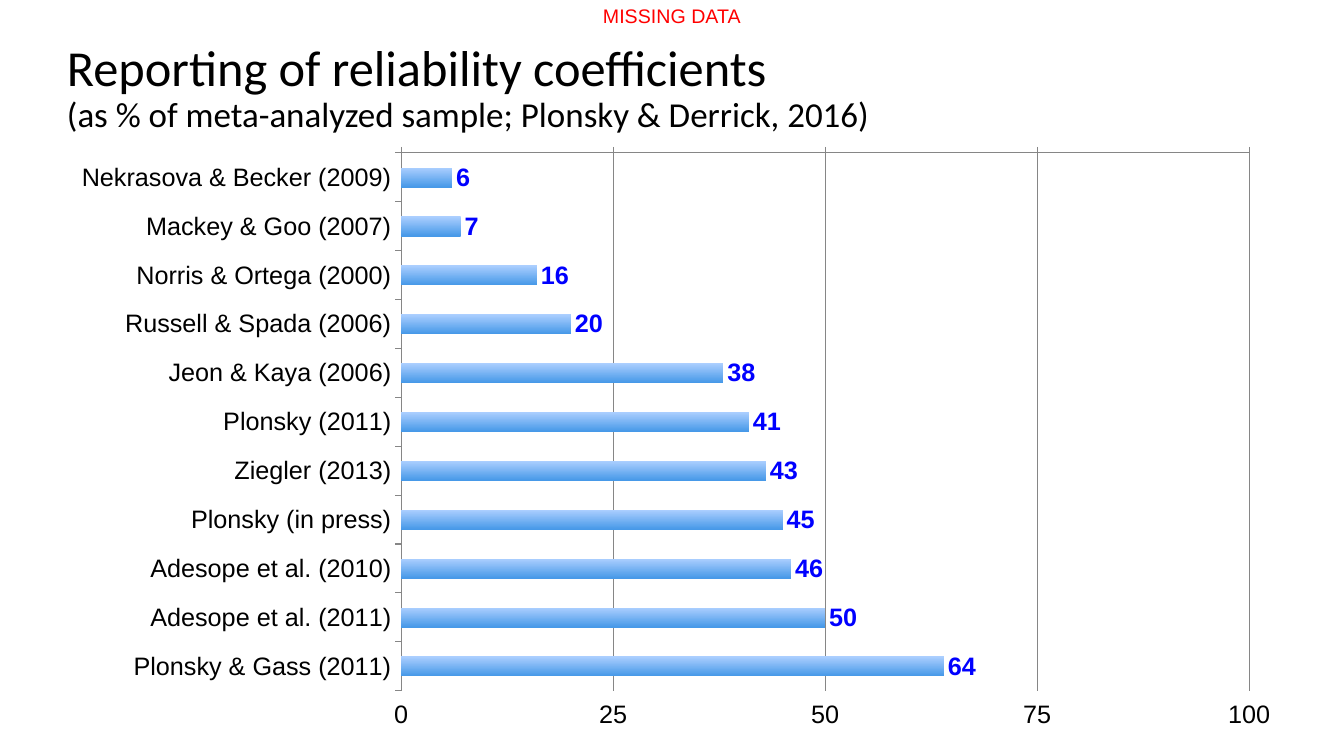
from dataclasses import dataclass

from pptx import Presentation
from pptx.chart.data import CategoryChartData
from pptx.dml.color import RGBColor
from pptx.enum.chart import XL_CHART_TYPE as ChartType
from pptx.enum.chart import XL_LABEL_POSITION as LabelPosition
from pptx.enum.chart import XL_TICK_LABEL_POSITION as TickLabelPosition
from pptx.enum.chart import XL_TICK_MARK as TickMark
from pptx.enum.text import MSO_ANCHOR as Anchor
from pptx.enum.text import PP_ALIGN as Align
from pptx.util import Emu, Pt


@dataclass(frozen=True)
class Theme:
    text: RGBColor = RGBColor(0, 0, 0)
    banner: RGBColor = RGBColor(255, 0, 0)
    value_label: RGBColor = RGBColor(0, 0, 255)
    rule: RGBColor = RGBColor(0x86, 0x86, 0x86)
    bar_top: RGBColor = RGBColor(0xAC, 0xCF, 0xFF)
    bar_bottom: RGBColor = RGBColor(0x47, 0x99, 0xE8)
    title_font: str = "Calibri"
    body_font: str = "Arial"
    title_size: Pt = Pt(36)
    subtitle_size: Pt = Pt(25)
    chart_size: Pt = Pt(18)
    banner_size: Pt = Pt(14)


THEME = Theme()
EMU_PER_PX = 914400 / 100.8


def px(*lengths):
    return [Emu(round(length * EMU_PER_PX)) for length in lengths]


REPORTING = {
    "Nekrasova & Becker (2009)": 6,
    "Mackey & Goo (2007)": 7,
    "Norris & Ortega (2000)": 16,
    "Russell & Spada (2006)": 20,
    "Jeon & Kaya (2006)": 38,
    "Plonsky (2011)": 41,
    "Ziegler (2013)": 43,
    "Plonsky (in press)": 45,
    "Adesope et al. (2010)": 46,
    "Adesope et al. (2011)": 50,
    "Plonsky & Gass (2011)": 64,
}

presentation = Presentation()
presentation.slide_width, presentation.slide_height = px(1344, 756)
slide = presentation.slides.add_slide(presentation.slide_layouts[6])

# Bar chart
chart_data = CategoryChartData()
chart_data.categories = list(REPORTING)
chart_data.add_series("Series 1", list(REPORTING.values()))
chart = slide.shapes.add_chart(
    ChartType.BAR_CLUSTERED, *px(57, 141, 1238, 600), chart_data
).chart
chart.has_legend = False
chart.has_title = False
chart.font.name = THEME.body_font
chart.font.size = THEME.chart_size
chart.font.color.rgb = THEME.text

# The first category is on top, and the value axis runs below the last one
category_axis, value_axis = chart.category_axis, chart.value_axis
category_axis.reverse_order = True
category_axis.crosses_at = len(REPORTING) + 1
value_axis.tick_label_position = TickLabelPosition.HIGH
value_axis.minimum_scale, value_axis.maximum_scale = 0, 100
value_axis.major_unit = 25
value_axis.has_major_gridlines = True
value_axis.tick_labels.number_format = "General"
value_axis.tick_labels.number_format_is_linked = False
for axis in (category_axis, value_axis):
    axis.major_tick_mark = TickMark.OUTSIDE
    axis.minor_tick_mark = TickMark.NONE
for ruled in (category_axis, value_axis, value_axis.major_gridlines):
    ruled.format.line.color.rgb = THEME.rule
    ruled.format.line.width = Pt(0.75)

plot = chart.plots[0]
plot.gap_width = 150
plot.vary_by_categories = False
bar_fill = plot.series[0].format.fill
bar_fill.gradient()
bar_fill.gradient_angle = 270
for stop, color in zip(bar_fill.gradient_stops, (THEME.bar_top, THEME.bar_bottom)):
    stop.color.rgb = color

plot.has_data_labels = True
labels = plot.data_labels
labels.show_value = True
labels.position = LabelPosition.OUTSIDE_END
labels.font.size = THEME.chart_size
labels.font.bold = True
labels.font.color.rgb = THEME.value_label

# Title with a smaller second line
title_frame = slide.shapes.add_textbox(*px(57, 26, 1238, 126)).text_frame
title_frame.word_wrap = True
title_frame.vertical_anchor = Anchor.MIDDLE
title_frame.margin_left, title_frame.margin_top = px(10, 10)
title_frame.margin_right, title_frame.margin_bottom = px(10, 10)
paragraph = title_frame.paragraphs[0]
paragraph.line_spacing = 0.9
paragraph.font.name = THEME.title_font
paragraph.font.color.rgb = THEME.text
heading = paragraph.add_run()
heading.text = "Reporting of reliability coefficients"
heading.font.size = THEME.title_size
paragraph.add_line_break()
subtitle = paragraph.add_run()
subtitle.text = "(as % of meta-analyzed sample; Plonsky & Derrick, 2016)"
subtitle.font.size = THEME.subtitle_size

# Banner at the top edge
banner_frame = slide.shapes.add_textbox(*px(168, -1, 1008, 34)).text_frame
banner_frame.word_wrap = True
paragraph = banner_frame.paragraphs[0]
paragraph.text = "MISSING DATA"
paragraph.alignment = Align.CENTER
paragraph.font.name = THEME.body_font
paragraph.font.size = THEME.banner_size
paragraph.font.color.rgb = THEME.banner

presentation.save("out.pptx")
